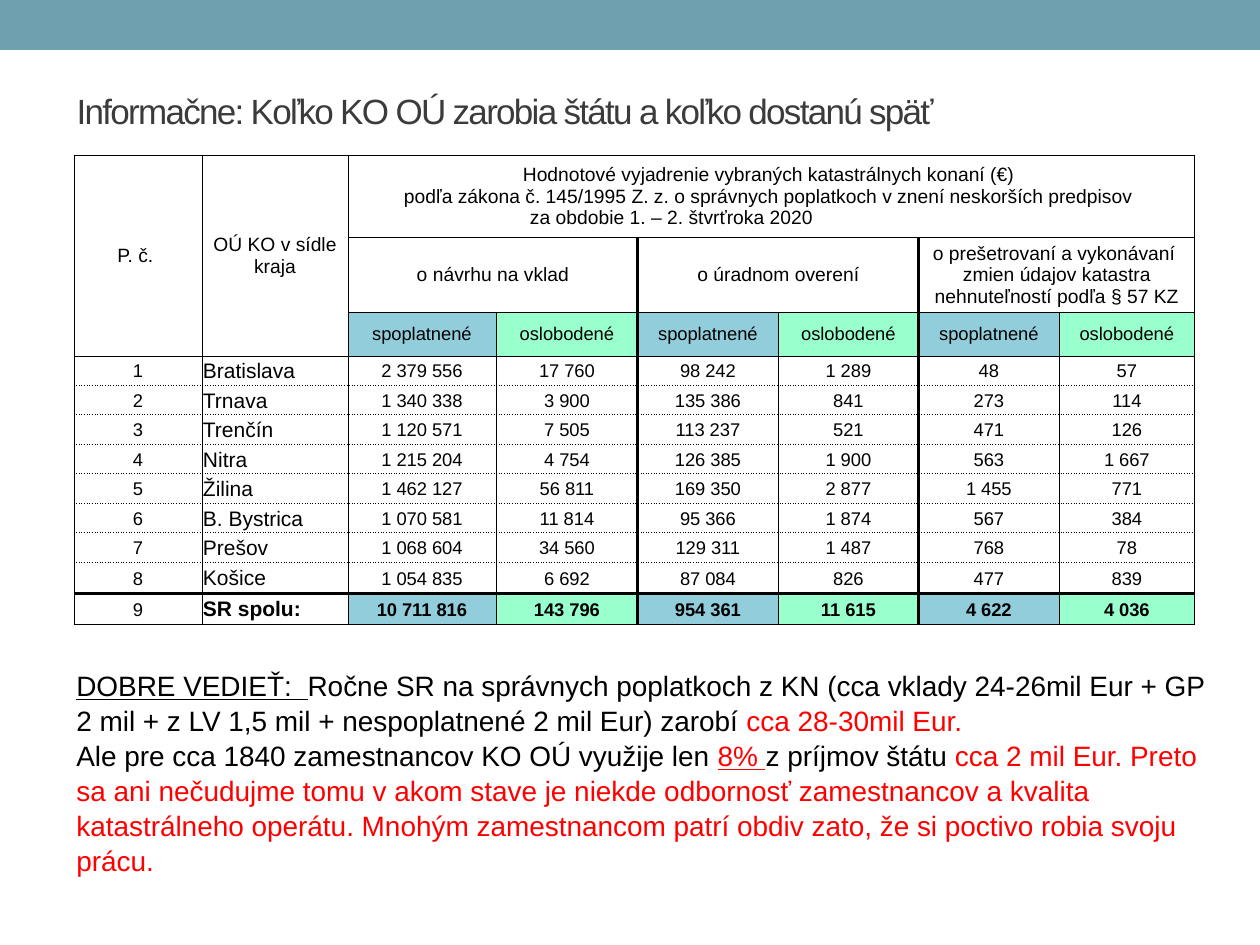
from lxml import etree
from pptx import Presentation
from pptx import util as u
from pptx.dml.color import RGBColor
from pptx.enum import shapes, text
from pptx.oxml.ns import qn

PX = 914400 / 126
BLACK, RED = "000000", "FF0000"
PAID, EXEMPT = "92CDDC", "99FFCC"


def px(length):
    return u.Emu(round(length * PX))


def color(value):
    return RGBColor.from_string(value)


class SlideBuilder:
    font = "Arial"

    def __init__(self, slide):
        self.slide = slide

    def style(self, run, size, shade=BLACK, bold=False, underline=False):
        font = run.font
        font.name, font.size = self.font, u.Pt(size)
        font.bold, font.underline = bold, underline
        font.color.rgb = color(shade)

    def bar(self, left, top, width, height, fill):
        band = self.slide.shapes.add_shape(
            shapes.MSO_SHAPE.RECTANGLE, px(left), px(top), px(width), px(height))
        band.shadow.inherit = False
        band.fill.solid()
        band.fill.fore_color.rgb = color(fill)
        band.line.fill.background()

    def title(self, wording, left, top, width, height, size, shade):
        title = self.slide.shapes.title
        title.left, title.top, title.width, title.height = map(px, (left, top, width, height))
        frame = title.text_frame
        frame.text = wording
        frame.vertical_anchor = text.MSO_ANCHOR.MIDDLE
        heading = frame.paragraphs[0]
        heading.alignment = text.PP_ALIGN.LEFT
        self.style(heading.runs[0], size, shade)
        heading.runs[0].font._element.set("spc", "-100")

    def paragraphs(self, left, top, width, height, size, content, spacing):
        frame = self.slide.shapes.add_textbox(
            px(left), px(top), px(width), px(height)).text_frame
        frame.word_wrap = True
        for i, pieces in enumerate(content):
            paragraph = frame.paragraphs[0] if i == 0 else frame.add_paragraph()
            paragraph.line_spacing = spacing
            for wording, shade, underline in pieces:
                run = paragraph.add_run()
                run.text = wording
                self.style(run, size, shade, underline=underline)

    def table(self, left, top, columns, rows):
        table = self.slide.shapes.add_table(
            len(rows), len(columns), px(left), px(top), px(sum(columns)), px(sum(rows))).table
        table.first_row = table.horz_banding = False
        for column, width in zip(table.columns, columns):
            column.width = px(width)
        for row, height in zip(table.rows, rows):
            row.height = px(height)
        return table

    def cell(self, cell, wording, size, bold=False, centred=True, fill=None):
        cell.text = wording
        cell.vertical_anchor = text.MSO_ANCHOR.MIDDLE
        cell.margin_left = cell.margin_right = cell.margin_top = px(1)
        cell.margin_bottom = 0
        for paragraph in cell.text_frame.paragraphs:
            paragraph.alignment = text.PP_ALIGN.CENTER if centred else text.PP_ALIGN.LEFT
            for run in paragraph.runs:
                self.style(run, size, bold=bold)
        if fill:
            cell.fill.solid()
            cell.fill.fore_color.rgb = color(fill)
        else:
            cell.fill.background()

    def borders(self, cell, edges):
        """Edges are (width in pt, dash) for left, right, top, bottom."""
        properties = cell._tc.get_or_add_tcPr()
        for i, (side, (width, dash)) in enumerate(zip("LRTB", edges)):
            line = etree.Element(qn(f"a:ln{side}"), w=str(u.Pt(width)))
            fill = etree.SubElement(line, qn("a:solidFill"))
            etree.SubElement(fill, qn("a:srgbClr"), val=BLACK)
            etree.SubElement(line, qn("a:prstDash"), val=dash)
            properties.insert(i, line)


REGIONS = [
    ("Bratislava", "2 379 556", "17 760", "98 242", "1 289", "48", "57"),
    ("Trnava", "1 340 338", "3 900", "135 386", "841", "273", "114"),
    ("Trenčín", "1 120 571", "7 505", "113 237", "521", "471", "126"),
    ("Nitra", "1 215 204", "4 754", "126 385", "1 900", "563", "1 667"),
    ("Žilina", "1 462 127", "56 811", "169 350", "2 877", "1 455", "771"),
    ("B. Bystrica", "1 070 581", "11 814", "95 366", "1 874", "567", "384"),
    ("Prešov", "1 068 604", "34 560", "129 311", "1 487", "768", "78"),
    ("Košice", "1 054 835", "6 692", "87 084", "826", "477", "839"),
    ("SR spolu:", "10 711 816", "143 796", "954 361", "11 615", "4 622", "4 036"),
]
# Header cells: row, column, rows spanned, columns spanned, wording
HEADERS = [
    (0, 0, 3, 1, "P. č. "),
    (0, 1, 3, 1, "OÚ KO v sídle kraja"),
    (0, 2, 1, 6, "Hodnotové vyjadrenie vybraných katastrálnych konaní (€) \n"
                 "podľa zákona č. 145/1995 Z. z. o správnych poplatkoch v znení neskorších predpisov \n"
                 "za obdobie 1. – 2. štvrťroka 2020"),
    (1, 2, 1, 2, "o návrhu na vklad"),
    (1, 4, 1, 2, "o úradnom overení"),
    (1, 6, 1, 2, "o prešetrovaní a vykonávaní  zmien údajov katastra nehnuteľností podľa § 57 KZ"),
]
NOTE = [
    [("DOBRE VEDIEŤ:  ", BLACK, True),
     ("Ročne SR na správnych poplatkoch z KN (cca vklady 24-26mil Eur + GP 2 mil"
      " + z LV 1,5 mil + nespoplatnené 2 mil Eur) zarobí ", BLACK, False),
     ("cca 28-30mil Eur.", RED, False)],
    [("Ale pre cca 1840 zamestnancov KO OÚ využije len ", BLACK, False),
     ("8% ", RED, True),
     ("z príjmov štátu ", BLACK, False),
     ("cca 2 mil Eur. Preto sa ani nečudujme tomu v akom stave je niekde odbornosť"
      " zamestnancov a kvalita katastrálneho operátu. Mnohým zamestnancom patrí obdiv"
      " zato, že si poctivo robia svoju prácu.", RED, False)],
]
FIRST_REGION, TOTAL = 3, 11


def vertical_edge(row, column):
    return (2 if row > 0 and column in (4, 6) else 0.5), "solid"


def horizontal_edge(row):
    if row == TOTAL:
        return 2, "solid"
    return 0.5, "sysDot" if FIRST_REGION < row < TOTAL else "solid"


def build_fees(builder):
    fees = builder.table(74, 155, [128, 146, 148, 142, 140, 141, 140, 136],
                         [82, 75, 44] + [30, 29] * 3 + [30, 31, 31])

    # Headers
    for row, column, height, width, wording in HEADERS:
        header = fees.cell(row, column)
        header.merge(fees.cell(row + height - 1, column + width - 1))
        builder.cell(header, wording, 11)
    period = fees.cell(0, 2).text_frame.paragraphs[-1]
    period.alignment = text.PP_ALIGN.LEFT
    period._p.get_or_add_pPr().set("marL", str(px(181)))
    for column in range(2, 8):
        kind, fill = (("oslobodené", EXEMPT) if column % 2 else ("spoplatnené", PAID))
        builder.cell(fees.cell(2, column), kind, 10.5, fill=fill)

    # Regions and total
    for number, (region, *amounts) in enumerate(REGIONS, 1):
        row = FIRST_REGION + number - 1
        total = row == TOTAL
        builder.cell(fees.cell(row, 0), str(number), 10.5)
        builder.cell(fees.cell(row, 1), region, 12, bold=total, centred=False)
        for column, amount in enumerate(amounts, 2):
            fill = (EXEMPT if column % 2 else PAID) if total else None
            builder.cell(fees.cell(row, column), amount, 10.5, bold=total, fill=fill)

    # Borders
    for row in range(len(fees.rows)):
        for column in range(len(fees.columns)):
            cell = fees.cell(row, column)
            if not cell.is_spanned:
                width, height = cell.span_width, cell.span_height
                builder.borders(cell, [
                    vertical_edge(row, column), vertical_edge(row, column + width),
                    horizontal_edge(row), horizontal_edge(row + height)])


def main():
    deck = Presentation()
    deck.slide_width, deck.slide_height = px(1260), px(945)
    builder = SlideBuilder(deck.slides.add_slide(deck.slide_layouts[5]))
    builder.bar(0, 0, 1260, 50, "6EA0B0")
    builder.title("Informačne: Koľko KO OÚ zarobia štátu a koľko dostanú späť",
                  64, 66, 1134, 90, 20, "3B3B3B")
    build_fees(builder)
    builder.paragraphs(64, 661, 1161, 217, 16, NOTE, 1.04)
    deck.save("out.pptx")


if __name__ == "__main__":
    main()
